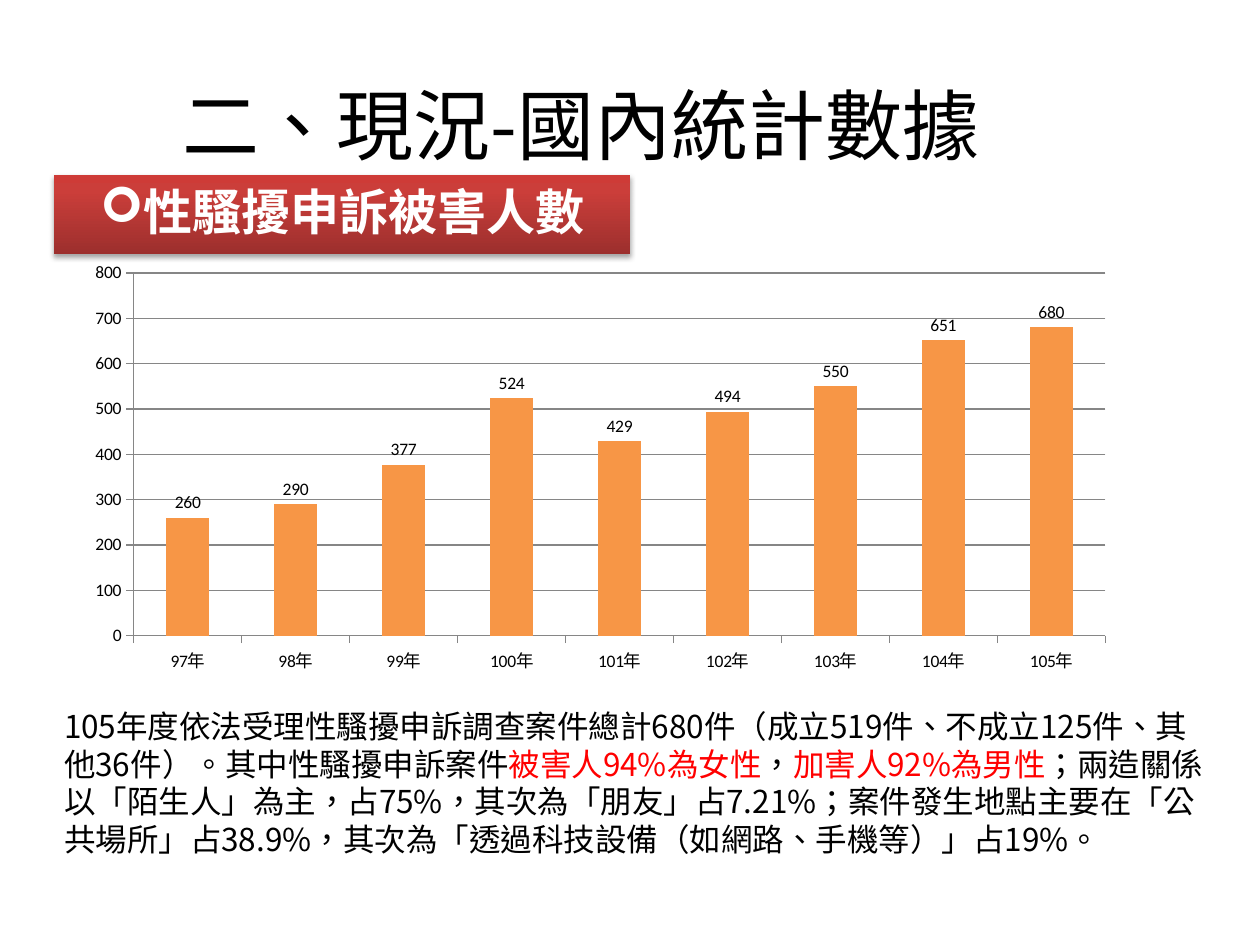
from lxml import etree
from pptx import Presentation
from pptx.chart.data import CategoryChartData
from pptx.dml.color import RGBColor
from pptx.enum.chart import XL_CHART_TYPE, XL_LABEL_POSITION, XL_TICK_MARK
from pptx.enum.lang import MSO_LANGUAGE_ID
from pptx.enum.shapes import MSO_SHAPE
from pptx.enum.text import MSO_ANCHOR, PP_ALIGN
from pptx.oxml import parse_xml
from pptx.oxml.ns import qn
from pptx.util import Inches, Pt

HUES = {
    "ink": "000000", "red": "FF0000", "white": "FFFFFF", "bar": "F79646",
    "grid": "868686", "deep": "9C2F2D", "mid": "CB3E3A", "top": "CE3B37",
}
SPACE = 'xmlns:a="http://schemas.openxmlformats.org/drawingml/2006/main"'


def tint(name):
    return RGBColor.from_string(HUES[name])


class Deck:
    face = "Noto Sans CJK SC"
    plot = "Calibri"

    def __init__(self, wide, high):
        self.show = Presentation()
        self.show.slide_width = Inches(wide)
        self.show.slide_height = Inches(high)
        self.slide = self.show.slides.add_slide(self.show.slide_layouts[6])

    def label(self, shape, runs, size, hue="ink", bold=False, align=PP_ALIGN.LEFT):
        """Fill the first paragraph with (words, hue) runs; a hue of None keeps the base one."""
        shape.text_frame.word_wrap = True
        para = shape.text_frame.paragraphs[0]
        para.alignment = align
        font = para.font
        font.name, font.size, font.bold = self.face, Pt(size), bold
        font.color.rgb = tint(hue)
        base = para._p.pPr.find(qn("a:defRPr"))
        etree.SubElement(base, qn("a:ea")).set("typeface", self.face)
        for words, shade in runs:
            run = para.add_run()
            run.text = words
            run.font.language_id = MSO_LANGUAGE_ID.TRADITIONAL_CHINESE
            if shade:
                run.font.color.rgb = tint(shade)
        return para

    def text(self, box, runs, size, **style):
        shape = self.slide.shapes.add_textbox(*map(Inches, box))
        return shape, self.label(shape, runs, size, **style)

    def banner(self, box, words, size):
        """Bulleted heading on a shaded bar with a soft shadow."""
        shape = self.slide.shapes.add_shape(MSO_SHAPE.RECTANGLE, *map(Inches, box))
        shape.line.fill.background()
        stops = "".join(
            f'<a:gs pos="{at * 1000}"><a:srgbClr val="{HUES[hue]}"/></a:gs>'
            for at, hue in ((0, "deep"), (80, "mid"), (100, "top")))
        props = shape._element.spPr
        props.insert(2, parse_xml(
            f'<a:gradFill {SPACE} rotWithShape="1"><a:gsLst>{stops}</a:gsLst>'
            '<a:lin ang="16200000" scaled="0"/></a:gradFill>'))
        props.append(parse_xml(
            f'<a:effectLst {SPACE}><a:outerShdw blurRad="{Pt(3.1)}" dist="{Pt(1.8)}" '
            'dir="5400000" rotWithShape="0"><a:srgbClr val="000000">'
            '<a:alpha val="35000"/></a:srgbClr></a:outerShdw></a:effectLst>'))
        shape.text_frame.vertical_anchor = MSO_ANCHOR.TOP
        para = self.label(shape, [(words, None)], size, "white", True, PP_ALIGN.CENTER)
        para.space_before = Pt(5.6)
        form = para._p.pPr
        form.set("marL", "0")
        form.set("indent", str(-Inches(0.31)))
        form.insert(1, parse_xml(f'<a:buFont {SPACE} typeface="Wingdings"/>'))
        form.insert(2, parse_xml(f'<a:buChar {SPACE} char="➢"/>'))

    def chart(self, box, names, values):
        data = CategoryChartData()
        data.categories = names
        data.add_series("Series 1", values)
        chart = self.slide.shapes.add_chart(
            XL_CHART_TYPE.COLUMN_CLUSTERED, *map(Inches, box), data).chart
        chart.has_legend = chart.has_title = False
        chart.font.name, chart.font.size = self.plot, Pt(10)
        chart.font.color.rgb = tint("ink")
        for axis in (chart.category_axis, chart.value_axis):
            axis.major_tick_mark = XL_TICK_MARK.OUTSIDE
            axis.format.line.color.rgb = tint("grid")
        scale = chart.value_axis
        scale.minimum_scale, scale.maximum_scale, scale.major_unit = 0, 800, 100
        scale.major_gridlines.format.line.color.rgb = tint("grid")
        plot = chart.plots[0]
        plot.gap_width, plot.vary_by_categories = 150, False
        fill = plot.series[0].format.fill
        fill.solid()
        fill.fore_color.rgb = tint("bar")
        plot.has_data_labels = True
        plot.data_labels.show_value = True
        plot.data_labels.position = XL_LABEL_POSITION.OUTSIDE_END


def main():
    deck = Deck(10, 7.5)
    title, _ = deck.text((0.11, 0.36, 9, 1.25), [("二、現況-國內統計數據", None)],
                         44, align=PP_ALIGN.CENTER)
    title.text_frame.vertical_anchor = MSO_ANCHOR.MIDDLE
    _, note = deck.text((0.41, 5.56, 9.29, 1.31), [
        ("105年度依法受理性騷擾申訴調查案件總計680件（成立519件、不成立125件、其他36件）。"
         "其中性騷擾申訴案件", None),
        ("被害人94%為女性", "red"),
        ("，", None),
        ("加害人92%為男性", "red"),
        ("；兩造關係以「陌生人」為主，占75%，其次為「朋友」占7.21%；案件發生地點主要在"
         "「公共場所」占38.9%，其次為「透過科技設備（如網路、手機等）」占19%。", None),
    ], 18)
    note.space_before = Pt(5.4)
    deck.banner((0.43, 1.39, 4.57, 0.63), "性騷擾申訴被害人數", 28)
    deck.chart((0.59, 2.02, 8.35, 3.39), [f"{year}年" for year in range(97, 106)],
               (260, 290, 377, 524, 429, 494, 550, 651, 680))
    deck.show.save("out.pptx")


if __name__ == "__main__":
    main()
